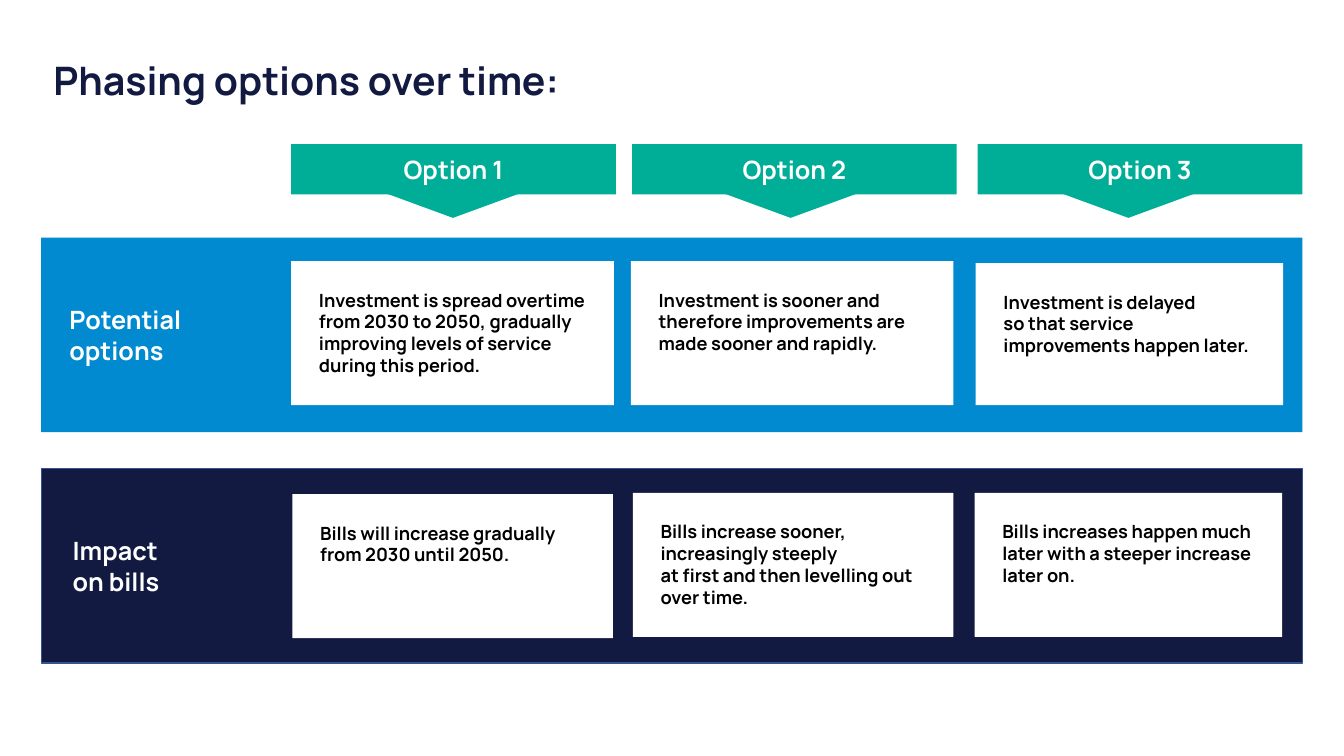
from pptx import Presentation
from pptx.dml.color import RGBColor
from pptx.enum.shapes import MSO_SHAPE
from pptx.enum.text import MSO_ANCHOR, PP_ALIGN
from pptx.util import Cm, Pt

FONT = "Manrope"
COLOURS = {
    "navy": "121A42",
    "blue": "018AD0",
    "green": "00AD97",
    "outline": "325491",
    "white": "FFFFFF",
    "black": "000000",
}

# Lengths in centimetres
BAND_LEFT, BAND_WIDTH, BAND_HEIGHT = 1.04, 31.78, 4.9
HEADER_LEFTS = (7.34, 15.93, 24.64)
HEADER_TOP, HEADER_WIDTH, HEADER_HEIGHT = 3.63, 8.18, 1.27
POINTER_LEFT, POINTER_STEP = 9.75, 8.51
CARD_INSET = 0.7

# Label lines, top, fill, line, left inset
BANDS = [
    (["Potential", "options"], 5.99, "blue", None, 0.71),
    (["Impact", "on bills"], 11.81, "navy", "outline", 0.79),
]

# Left, top, width, height, text
CARDS = [
    (7.34, 6.58, 8.13, 3.63,
     "Investment is spread overtime from 2030 to 2050, gradually "
     "improving levels of service during this period."),
    (15.9, 6.58, 8.13, 3.63,
     "Investment is sooner and therefore improvements are made sooner "
     "and rapidly."),
    (24.59, 6.63, 7.75, 3.58,
     "Investment is delayed \nso that service improvements happen later."),
    (7.37, 12.45, 8.08, 3.63,
     "Bills will increase gradually from 2030 until 2050."),
    (15.95, 12.42, 8.08, 3.63,
     "Bills increase sooner, increasingly steeply \n"
     "at first and then levelling out over time."),
    (24.56, 12.42, 7.75, 3.63,
     "Bills increases happen much later with a steeper increase later on."),
]


def rgb(name):
    return RGBColor.from_string(COLOURS[name])


def write(frame, paragraphs, size, colour, align=PP_ALIGN.LEFT):
    """Fill a text frame; a newline inside a paragraph is a line break."""
    frame.word_wrap = True
    for index, text in enumerate(paragraphs):
        para = frame.add_paragraph() if index else frame.paragraphs[0]
        para.alignment = align
        for number, line in enumerate(text.split("\n")):
            if number:
                para.add_line_break()
            span = para.add_run()
            span.text = line
            span.font.name = FONT
            span.font.size = Pt(size)
            span.font.bold = True
            span.font.color.rgb = rgb(colour)


def add_block(page, kind, left, top, width, height, fill, line=None):
    block = page.shapes.add_shape(kind, Cm(left), Cm(top), Cm(width), Cm(height))
    block.shadow.inherit = False
    block.fill.solid()
    block.fill.fore_color.rgb = rgb(fill)
    if line:
        block.line.color.rgb = rgb(line)
        block.line.width = Pt(1)
    else:
        block.line.fill.background()
    return block


def add_title(page, text):
    title = page.shapes.title
    title.left, title.top = Cm(1.09), Cm(1.3)
    title.width, title.height = Cm(16.94), Cm(1.45)
    title.text_frame.vertical_anchor = MSO_ANCHOR.TOP
    write(title.text_frame, [text], 28, "navy")


def add_band(page, label, top, fill, line, inset):
    band = add_block(page, MSO_SHAPE.RECTANGLE, BAND_LEFT, top,
                     BAND_WIDTH, BAND_HEIGHT, fill, line)
    band.text_frame.margin_left = Cm(inset)
    band.text_frame.vertical_anchor = MSO_ANCHOR.MIDDLE
    write(band.text_frame, label, 18, "white")


def add_header(page, left, text):
    header = add_block(page, MSO_SHAPE.RECTANGLE, left, HEADER_TOP,
                       HEADER_WIDTH, HEADER_HEIGHT, "green")
    header.text_frame.vertical_anchor = MSO_ANCHOR.MIDDLE
    write(header.text_frame, [text], 18, "white", PP_ALIGN.CENTER)


def add_pointer(page, left):
    pointer = add_block(page, MSO_SHAPE.ISOSCELES_TRIANGLE, left, 4.88,
                        3.33, 0.61, "green")
    pointer.rotation = 180


def add_card(page, left, top, width, height, text):
    card = add_block(page, MSO_SHAPE.RECTANGLE, left, top, width, height, "white")
    frame = card.text_frame
    frame.margin_left = frame.margin_right = Cm(CARD_INSET)
    frame.margin_top = frame.margin_bottom = Cm(CARD_INSET)
    frame.vertical_anchor = MSO_ANCHOR.TOP
    write(frame, [text], 13, "black")


def main():
    deck = Presentation()
    deck.slide_width, deck.slide_height = Cm(33.87), Cm(19.05)
    page = deck.slides.add_slide(deck.slide_layouts[5])

    add_title(page, "Phasing options over time:")

    # Row bands with their labels
    for band in BANDS:
        add_band(page, *band)

    # Column headers and the pointers below them
    for index, left in enumerate(HEADER_LEFTS):
        add_header(page, left, f"Option {index + 1}")
        add_pointer(page, POINTER_LEFT + index * POINTER_STEP)

    # Cards on the bands
    for card in CARDS:
        add_card(page, *card)

    deck.save("out.pptx")


if __name__ == "__main__":
    main()
